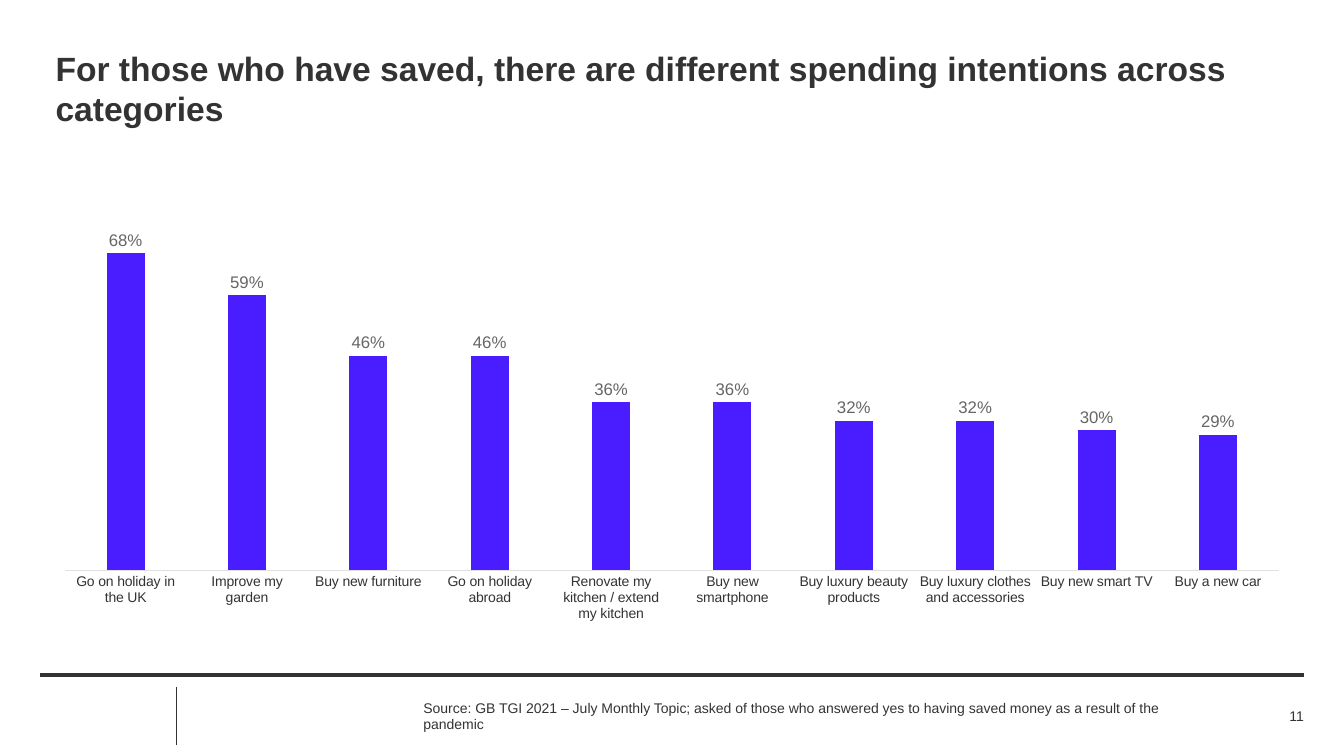
from lxml.etree import SubElement
from pptx import Presentation
from pptx.chart.data import CategoryChartData as Data
from pptx.dml.color import RGBColor as RGB
from pptx.enum.chart import XL_CHART_TYPE as Kind, XL_LABEL_POSITION as Spot, XL_TICK_MARK as Tick
from pptx.enum.text import MSO_ANCHOR as Anchor, PP_ALIGN as Align
from pptx.oxml.ns import qn
from pptx.util import Cm, Pt

DARK = RGB(0x33, 0x33, 0x33)
GREY = RGB(0x66, 0x66, 0x66)
PALE = RGB(0xE0, 0xE0, 0xE0)
BLUE = RGB(0x49, 0x1D, 0xFF)

SMALL = {"name": "Arial", "size": Pt(10)}
LARGE = {"name": "Arial", "size": Pt(24), "bold": True}
LABEL = {"name": "Arial", "size": Pt(12)}

PLANS = {
    "Go on holiday in the UK": 0.68,
    "Improve my garden": 0.59,
    "Buy new furniture": 0.46,
    "Go on holiday abroad": 0.46,
    "Renovate my kitchen / extend my kitchen": 0.36,
    "Buy new smartphone": 0.36,
    "Buy luxury beauty products": 0.32,
    "Buy luxury clothes and accessories": 0.32,
    "Buy new smart TV": 0.3,
    "Buy a new car": 0.29,
}


def style(font, form, color):
    for key, value in form.items():
        setattr(font, key, value)
    font.color.rgb = color


def add_text(slide, box, text, form, anchor=Anchor.MIDDLE, align=Align.LEFT):
    frame = slide.shapes.add_textbox(*map(Cm, box)).text_frame
    for side in ("left", "top", "right", "bottom"):
        setattr(frame, f"margin_{side}", 0)
    frame.word_wrap = True
    frame.vertical_anchor = anchor
    para = frame.paragraphs[0]
    para.alignment = align
    run = para.add_run()
    run.text = text
    style(run.font, form, DARK)


def add_rule(slide, ends, width):
    rule = slide.shapes.add_connector(1, *map(Cm, ends))
    rule.line.color.rgb = DARK
    rule.line.width = Pt(width)
    SubElement(rule.element.spPr, qn("a:effectLst"))


def add_bars(slide, box):
    data = Data(number_format="0%")
    data.categories = PLANS.keys()
    data.add_series("Series 1", PLANS.values())
    chart = slide.shapes.add_chart(Kind.COLUMN_CLUSTERED, *map(Cm, box), data).chart
    style(chart.font, SMALL, DARK)
    chart.has_legend = chart.has_title = False

    base = chart.category_axis
    base.major_tick_mark = base.minor_tick_mark = Tick.NONE
    base.format.line.color.rgb = PALE
    base.format.line.width = Pt(0.75)
    style(base.tick_labels.font, SMALL, DARK)

    scale = chart.value_axis
    form = {"visible": False, "has_major_gridlines": False, "minimum_scale": 0, "maximum_scale": 0.8}
    for key, value in form.items():
        setattr(scale, key, value)

    plot = chart.plots[0]
    form = {"gap_width": 219, "overlap": -27, "vary_by_categories": False, "has_data_labels": True}
    for key, value in form.items():
        setattr(plot, key, value)
    fill = plot.series[0].format.fill
    fill.solid()
    fill.fore_color.rgb = BLUE

    labels = plot.data_labels
    form = {"show_value": True, "position": Spot.OUTSIDE_END,
            "number_format": "0%", "number_format_is_linked": False}
    for key, value in form.items():
        setattr(labels, key, value)
    style(labels.font, LABEL, GREY)


def add_foot(slide, box, source, number):
    left, top, width, height = box
    add_rule(slide, (left + 3.45, top + 0.3, left + 3.45, top + height), 1)
    add_rule(slide, (left, top, left + width, top), 3)
    add_text(slide, (left + 9.67, top + 0.76, 19.25, 0.56), source, SMALL)
    add_text(slide, (left + width - 2.7, top + 0.76, 2.7, 0.56), number, SMALL, align=Align.RIGHT)


def main():
    deck = Presentation()
    deck.slide_width, deck.slide_height = Cm(33.87), Cm(19.05)
    slide = deck.slides.add_slide(deck.slide_layouts[6])
    add_text(slide, (1.4, 1.2, 31.85, 1.12),
             "For those who have saved, there are different spending intentions across categories",
             LARGE, Anchor.TOP)
    add_bars(slide, (1, 4.75, 31.86, 11.13))
    add_foot(slide, (1, 17, 31.86, 1.77),
             "Source: GB TGI 2021 – July Monthly Topic; asked of those who answered yes "
             "to having saved money as a result of the pandemic", "11")
    deck.save("out.pptx")


if __name__ == "__main__":
    main()
